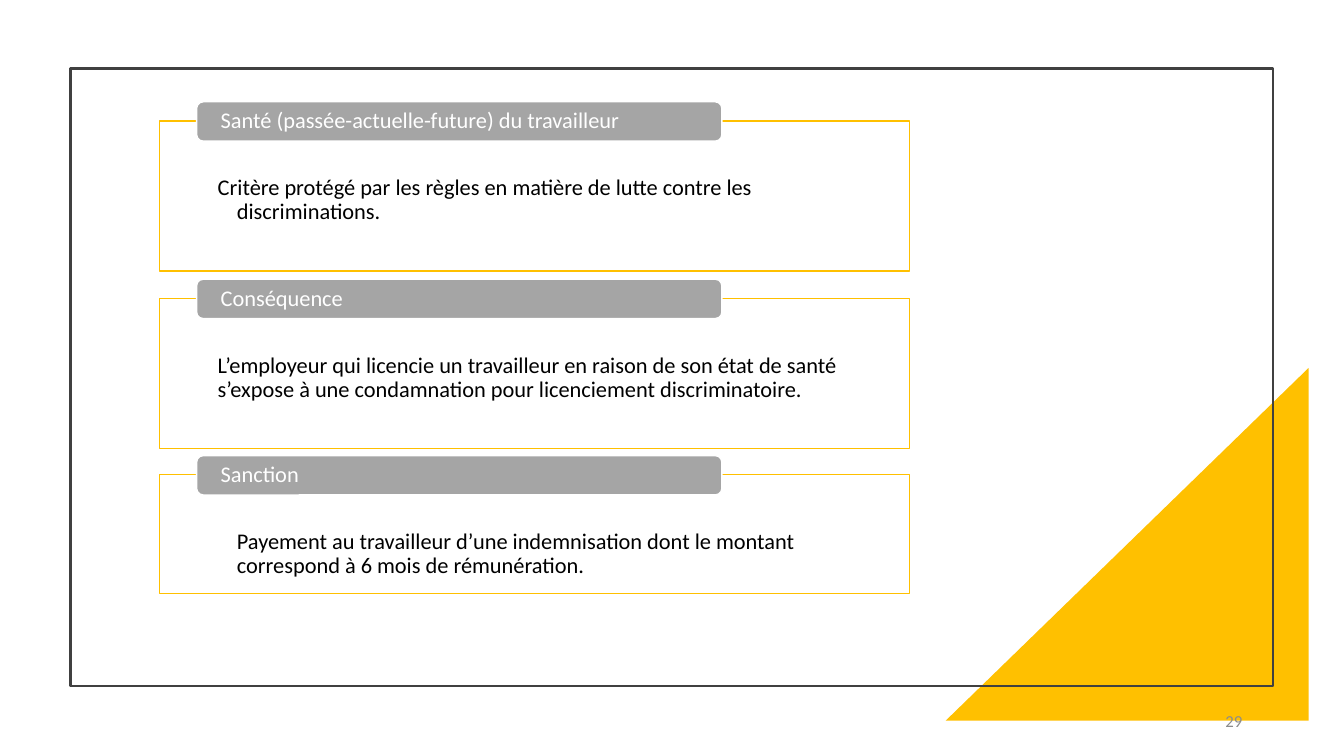
from pptx import Presentation
from pptx.dml.color import RGBColor
from pptx.enum.shapes import MSO_SHAPE
from pptx.enum.text import MSO_ANCHOR, PP_ALIGN
from pptx.util import Emu, Pt
from lxml import etree

RECT = MSO_SHAPE.RECTANGLE
ROUNDED = MSO_SHAPE.ROUNDED_RECTANGLE
TRIANGLE = MSO_SHAPE.RIGHT_TRIANGLE
TOP, MIDDLE = MSO_ANCHOR.TOP, MSO_ANCHOR.MIDDLE
LEFT, RIGHT = PP_ALIGN.LEFT, PP_ALIGN.RIGHT
PX = 9144
FONT = "Calibri"
COLORS = {
    "white": "FFFFFF",
    "black": "000000",
    "gold": "FFC000",
    "grey": "A5A5A5",
    "frame": "404040",
    "number": "8C8C8C",
}
DRAWING = "{http://schemas.openxmlformats.org/drawingml/2006/main}"

deck = Presentation()
deck.slide_width = Emu(1333 * PX)
deck.slide_height = Emu(750 * PX)
page = deck.slides.add_slide(deck.slide_layouts[6])


def add_box(kind, place, fill=None, line=None, width=1):
    box = page.shapes.add_shape(kind, *[Emu(value * PX) for value in place])
    box.shadow.inherit = False
    if fill:
        box.fill.solid()
        box.fill.fore_color.rgb = RGBColor.from_string(COLORS[fill])
    else:
        box.fill.background()
    if line:
        box.line.color.rgb = RGBColor.from_string(COLORS[line])
        box.line.width = Pt(width)
    else:
        box.line.fill.background()
    return box


def write(box, text, color, size, insets, anchor=MIDDLE, align=LEFT, spacing=0.9):
    frame = box.text_frame
    frame.word_wrap = True
    frame.vertical_anchor = anchor
    frame.margin_left, frame.margin_top, frame.margin_right, frame.margin_bottom = [
        Emu(value * PX) for value in insets
    ]
    para = frame.paragraphs[0]
    para.alignment = align
    para.line_spacing = spacing
    span = para.add_run()
    span.text = text
    span.font.name = FONT
    span.font.size = Pt(size)
    span.font.color.rgb = RGBColor.from_string(COLORS[color])
    return para


triangle = add_box(TRIANGLE, (938, 365, 360, 350), fill="gold")
triangle._element.spPr.find(DRAWING + "xfrm").set("flipH", "1")
add_box(RECT, (70, 68, 1193, 613), line="frame", width=1.5)

sections = [
    ("Santé (passée-actuelle-future) du travailleur",
     "Critère protégé par les règles en matière de lutte contre les discriminations.",
     149, 19, -19),
    ("Conséquence",
     "L’employeur qui licencie un travailleur en raison de son état de santé "
     "s’expose à une condamnation pour licenciement discriminatoire.",
     149, 0, 0),
    ("Sanction",
     "Payement au travailleur d’une indemnisation dont le montant "
     "correspond à 6 mois de rémunération.",
     118, 19, 0),
]
for index, (heading, body, height, margin, indent) in enumerate(sections):
    top = 120 + index * 175 + index // 1 * 1 - index // 2
    panel = add_box(RECT, (158, top, 744, height), fill="white", line="gold")
    shade = panel._element.spPr.find(DRAWING + "solidFill")[0]
    etree.SubElement(shade, DRAWING + "alpha").set("val", "90000")
    para = write(panel, body, "black", 16, (58, 55, 58, 0), anchor=TOP)
    settings = para._p.get_or_add_pPr()
    settings.set("marL", str(margin * PX))
    settings.set("indent", str(indent * PX))

    label = add_box(ROUNDED, (195, top - 19, 521, 39), fill="grey", line="white")
    write(label, heading, "white", 16, (22, 0, 22, 0))

number = page.shapes.add_textbox(*[Emu(value * PX) for value in (942, 695, 300, 40)])
write(number, "29", "number", 12, (10, 5, 10, 5), align=RIGHT, spacing=1.0)

deck.save("out.pptx")
